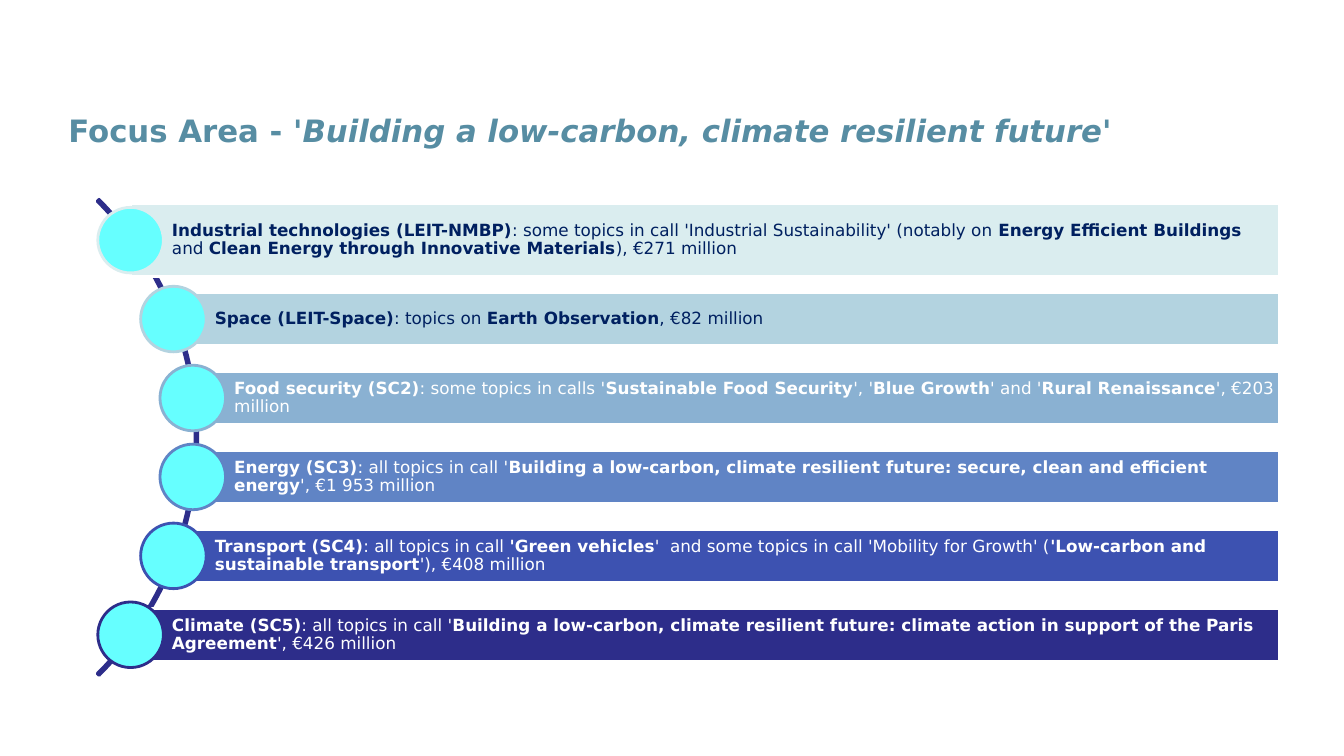
from dataclasses import dataclass
from math import sqrt

from pptx import Presentation
from pptx.dml.color import RGBColor
from pptx.enum.shapes import MSO_SHAPE as Shape
from pptx.enum.text import MSO_ANCHOR as Anchor, PP_ALIGN as Align
from pptx.util import Inches, Pt

FONT = "DejaVu Sans"
WHITE = RGBColor(0xFF, 0xFF, 0xFF)
NAVY = RGBColor(0x00, 0x20, 0x60)
TEAL = RGBColor(0x57, 0x8D, 0xA3)
CYAN = RGBColor(0x66, 0xFF, 0xFF)
ICE = RGBColor(0xDA, 0xED, 0xEF)
PALE = RGBColor(0xB3, 0xD3, 0xE0)
SKY = RGBColor(0x8A, 0xB1, 0xD2)
STEEL = RGBColor(0x60, 0x84, 0xC5)
ROYAL = RGBColor(0x3D, 0x52, 0xB1)
INDIGO = RGBColor(0x2D, 0x2D, 0x8A)

prs = Presentation()
prs.slide_width, prs.slide_height = Inches(13.33), Inches(7.5)
s = prs.slides.add_slide(prs.slide_layouts[6])


def across(percent: float) -> int:
    """Share of the slide's width."""
    return round(prs.slide_width * percent / 100)


def down(percent: float) -> int:
    """Share of the slide's height."""
    return round(prs.slide_height * percent / 100)


# Common geometry: every bar starts on one circle around the arc's centre
CENTRE_X, CENTRE_Y = across(-10.35), down(57.87)
ARC_SIZE, TRACK_RADIUS = down(89.07), down(44.2)
PITCH, DOT_SIZE, BAR_RIGHT = down(10.44), down(8.67), across(95.2)
TEXT_INDENT, TEXT_PAD = across(3.08), across(0.22)
BAR, TALL_BAR = down(6.93), down(9.73)


@dataclass(frozen=True)
class Topic:
    text: str  # ** switches bold on and off
    fill: RGBColor
    color: RGBColor = WHITE
    height: int = BAR


TOPICS = [
    Topic("**Industrial technologies (LEIT-NMBP)**: some topics in call 'Industrial "
          "Sustainability' (notably on **Energy Efficient Buildings **and **Clean Energy "
          "through Innovative Materials**), €271 million", ICE, NAVY, TALL_BAR),
    Topic("**Space (LEIT-Space)**: topics on **Earth Observation**, €82 million", PALE, NAVY),
    Topic("**Food security (SC2)**: some topics in calls '**Sustainable Food Security**', "
          "'**Blue Growth**' and '**Rural Renaissance**', €203 million", SKY),
    Topic("**Energy (SC3)**: all topics in call '**Building a low-carbon, climate resilient "
          "future: secure, clean and efficient energy**', €1 953 million", STEEL),
    Topic("**Transport (SC4)**: all topics in call **'Green vehicles**'  and some topics in "
          "call 'Mobility for Growth' (**'Low-carbon and sustainable transport**'), "
          "€408 million", ROYAL),
    Topic("**Climate (SC5)**: all topics in call '**Building a low-carbon, climate resilient "
          "future: climate action in support of the Paris Agreement**', €426 million", INDIGO),
]


def add_centred(kind: Shape, x: int, y: int, width: int, height: int,
                fill: RGBColor | None, line: RGBColor):
    """Draw a preset shape around the point x, y."""
    sp = s.shapes.add_shape(kind, x - width // 2, y - height // 2, width, height)
    sp.shadow.inherit = False
    if fill is None:
        sp.fill.background()
    else:
        sp.fill.solid()
        sp.fill.fore_color.rgb = fill
    sp.line.color.rgb = line
    sp.line.width = Pt(2)
    return sp


def add_topic(topic: Topic, row: int) -> None:
    """Draw one bar with its text and the dot at its left end."""
    offset = round((row - (len(TOPICS) - 1) / 2) * PITCH)
    x, y = CENTRE_X + round(sqrt(TRACK_RADIUS ** 2 - offset ** 2)), CENTRE_Y + offset
    bar = add_centred(Shape.RECTANGLE, (x + BAR_RIGHT) // 2, y, BAR_RIGHT - x,
                      topic.height, topic.fill, WHITE)
    tf = bar.text_frame
    tf.word_wrap = True
    tf.vertical_anchor = Anchor.MIDDLE
    tf.margin_left = TEXT_INDENT
    tf.margin_top = tf.margin_right = tf.margin_bottom = TEXT_PAD
    p = tf.paragraphs[0]
    p.alignment = Align.LEFT
    p.line_spacing = 0.9
    p.font.name, p.font.size = FONT, Pt(12)
    p.font.color.rgb = topic.color
    for i, part in enumerate(topic.text.split("**")):
        if part:
            r = p.add_run()
            r.text = part
            r.font.bold = i % 2 == 1
            r.font.color.rgb = topic.color
    add_centred(Shape.OVAL, x, y, DOT_SIZE, DOT_SIZE, CYAN, topic.fill)


# Title
title = s.shapes.add_textbox(across(4.35), down(14.8), across(89.8), down(8.4))
tf = title.text_frame
tf.word_wrap = True
tf.margin_top = 0
p = tf.paragraphs[0]
p.font.name, p.font.size, p.font.bold = FONT, Pt(22), True
p.font.color.rgb = TEAL
for text, italic in [("Focus Area - ", False),
                     ("'Building a low-carbon, climate resilient future'", True)]:
    r = p.add_run()
    r.text = text
    r.font.italic = italic

# Arc behind the bars, from 315 to 45 degrees
arc = add_centred(Shape.BLOCK_ARC, CENTRE_X, CENTRE_Y, ARC_SIZE, ARC_SIZE, None, INDIGO)
for i, value in enumerate((189, 27, 0.004)):
    arc.adjustments[i] = value

# Bars and dots
for row, topic in enumerate(TOPICS):
    add_topic(topic, row)

prs.save("out.pptx")
